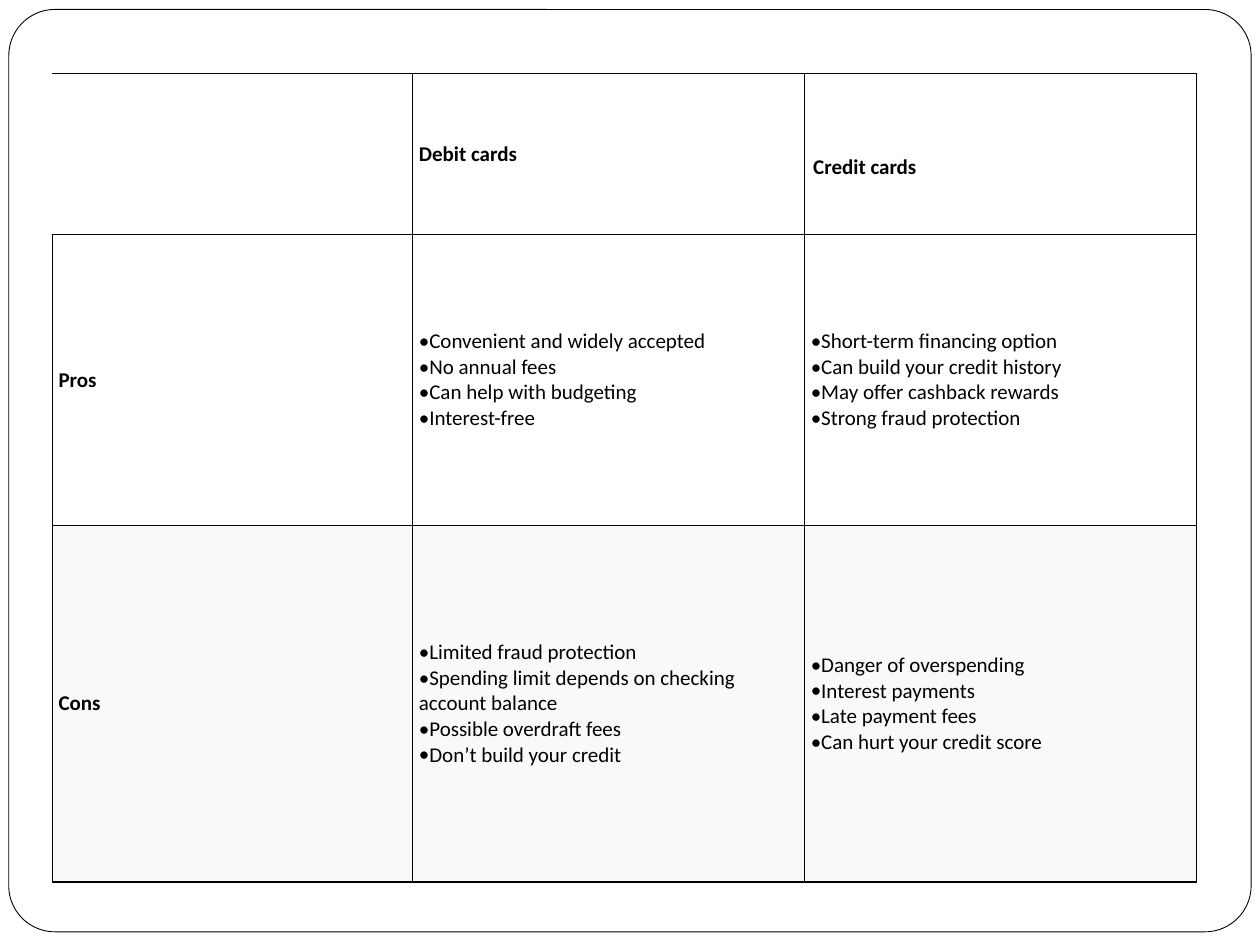
"""Build a slide comparing the pros and cons of debit and credit cards."""
from dataclasses import dataclass

from lxml import etree
from pptx import Presentation
from pptx import util as u
from pptx.dml.color import RGBColor
from pptx.enum import shapes, text
from pptx.oxml import ns


@dataclass(frozen=True)
class Theme:
    paper: str = "FFFFFF"
    shade: str = "F9F9F9"
    ink: str = "000000"
    font: str = "Calibri"
    size: float = 12
    frame_line: float = 0.5
    table_line: float = 1
    inset: float = 0.05


def write(paragraph, content, *, theme, bold=False, bullet=None):
    if bullet:
        properties = paragraph._p.get_or_add_pPr()
        properties.set("marL", "0")
        properties.set("indent", "0")
        etree.SubElement(properties, ns.qn("a:buFont"), typeface=theme.font)
        etree.SubElement(properties, ns.qn("a:buChar"), char=bullet)
    run = paragraph.add_run()
    run.text = content
    run.font.name = theme.font
    run.font.size = u.Pt(theme.size)
    run.font.bold = bold
    run.font.color.rgb = RGBColor.from_string(theme.ink)


class SlideBuilder:
    def __init__(self, presentation, theme, columns=100, rows=75):
        self.theme = theme
        self.slide = presentation.slides.add_slide(presentation.slide_layouts[6])
        self.column = presentation.slide_width / columns
        self.row = presentation.slide_height / rows

    def place(self, left, top, width, height):
        return (int(left * self.column), int(top * self.row),
                int(width * self.column), int(height * self.row))

    def frame(self, left, top, width, height, corner):
        shape = self.slide.shapes.add_shape(
            shapes.MSO_SHAPE.ROUNDED_RECTANGLE, *self.place(left, top, width, height))
        shape.adjustments[0] = corner
        shape.shadow.inherit = False
        shape.fill.solid()
        shape.fill.fore_color.rgb = RGBColor.from_string(self.theme.paper)
        shape.line.color.rgb = RGBColor.from_string(self.theme.ink)
        shape.line.width = u.Pt(self.theme.frame_line)

    def table(self, left, top, widths, heights):
        box = self.place(left, top, sum(widths), sum(heights))
        table = self.slide.shapes.add_table(len(heights), len(widths), *box).table
        table.first_row = table.horz_banding = False
        for column, width in zip(table.columns, widths):
            column.width = int(width * self.column)
        for row, height in zip(table.rows, heights):
            row.height = int(height * self.row)
        return table

    def borders(self, cell, sides):
        properties = cell._tc.get_or_add_tcPr()
        for side in "LRTB":
            line = etree.SubElement(properties, ns.qn(f"a:ln{side}"),
                                    w=str(u.Pt(self.theme.table_line)))
            if side in sides:
                fill = etree.SubElement(line, ns.qn("a:solidFill"))
                etree.SubElement(fill, ns.qn("a:srgbClr"), val=self.theme.ink)
            else:
                etree.SubElement(line, ns.qn("a:noFill"))

    def cell(self, cell, lines, fill, sides="LRTB", **style):
        self.borders(cell, sides)
        cell.fill.solid()
        cell.fill.fore_color.rgb = RGBColor.from_string(fill)
        cell.vertical_anchor = text.MSO_ANCHOR.MIDDLE
        inset = u.Inches(self.theme.inset)
        cell.margin_left = cell.margin_right = inset
        cell.margin_top = cell.margin_bottom = inset
        for index, line in enumerate(lines):
            frame = cell.text_frame
            paragraph = frame.add_paragraph() if index else frame.paragraphs[0]
            write(paragraph, line, theme=self.theme, **style)


HEADINGS = ["Debit cards", "Credit cards"]
COMPARISON = {
    "Pros": [
        ["Convenient and widely accepted", "No annual fees",
         "Can help with budgeting", "Interest-free"],
        ["Short-term financing option", "Can build your credit history",
         "May offer cashback rewards", "Strong fraud protection"],
    ],
    "Cons": [
        ["Limited fraud protection",
         "Spending limit depends on checking account balance",
         "Possible overdraft fees", "Don’t build your credit"],
        ["Danger of overspending", "Interest payments",
         "Late payment fees", "Can hurt your credit score"],
    ],
}


def main():
    presentation = Presentation()
    presentation.slide_width, presentation.slide_height = u.Inches(10), u.Inches(7.5)
    theme = Theme()
    builder = SlideBuilder(presentation, theme)
    builder.frame(0.7, 0.75, 98.6, 73.2, corner=0.05)
    table = builder.table(4.15, 5.85, [28.6, 31.1, 31.1], [12.75, 23.1, 28.3])

    builder.cell(table.cell(0, 0), [], theme.paper, sides="RTB")
    for column, heading in enumerate(HEADINGS, 1):
        builder.cell(table.cell(0, column), [heading], theme.paper, bold=True)
    credit_heading = table.cell(0, 2)
    credit_heading.vertical_anchor = text.MSO_ANCHOR.TOP
    credit_heading.margin_left = u.Inches(0.07)
    credit_heading.margin_top = u.Inches(0.64)

    fills = [theme.paper, theme.shade]
    for row, (label, points) in enumerate(COMPARISON.items(), 1):
        fill = fills[row - 1]
        builder.cell(table.cell(row, 0), [label], fill, bold=True)
        for column, lines in enumerate(points, 1):
            builder.cell(table.cell(row, column), lines, fill, bullet="•")
    presentation.save("out.pptx")


if __name__ == "__main__":
    main()
